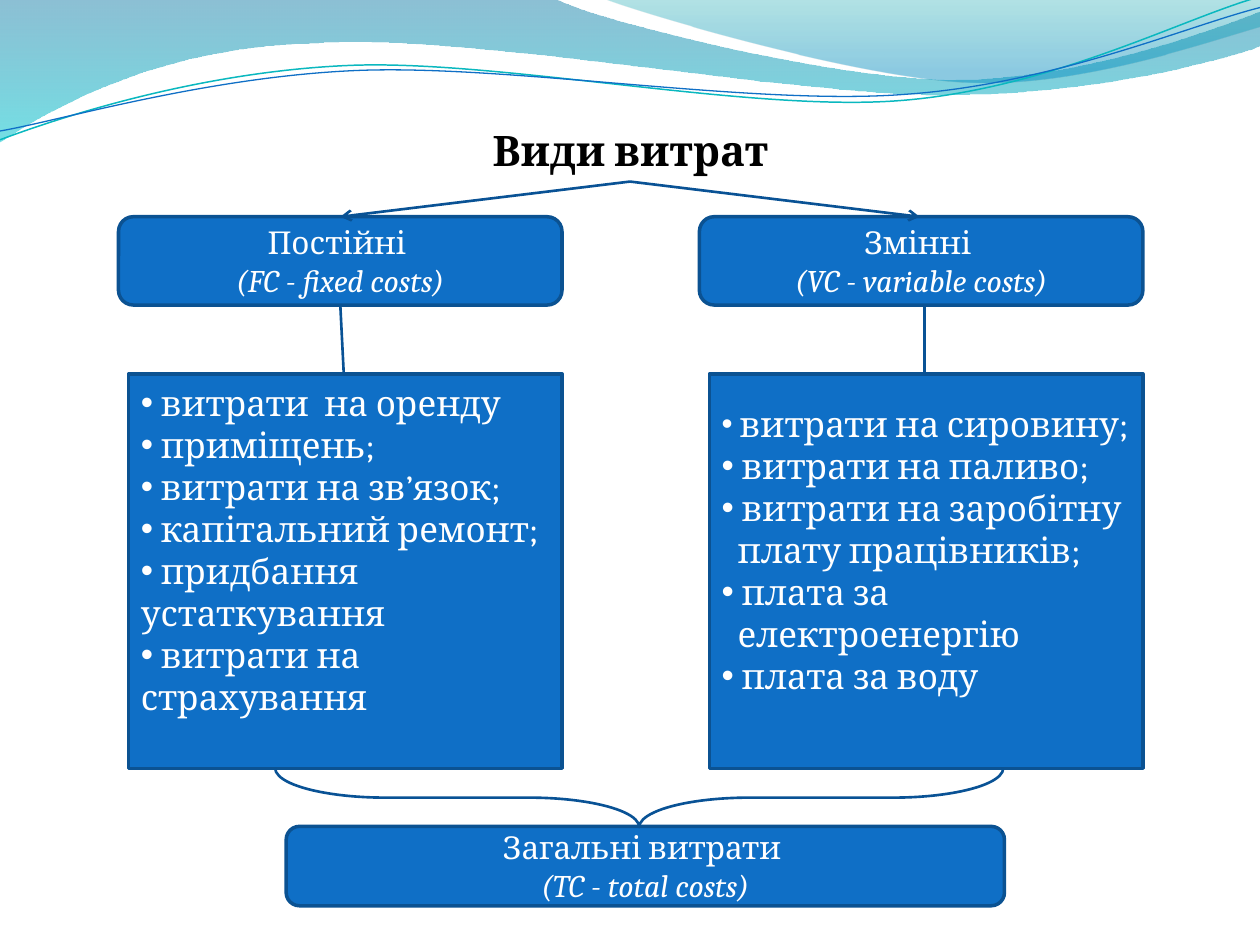
from dataclasses import dataclass
from typing import Optional

from lxml import etree
from pptx import Presentation
from pptx.dml.color import RGBColor
from pptx.enum.shapes import MSO_CONNECTOR, MSO_SHAPE
from pptx.enum.text import MSO_ANCHOR, MSO_AUTO_SIZE, PP_ALIGN
from pptx.oxml.ns import qn
from pptx.util import Cm, Pt

RECT, ROUND = MSO_SHAPE.RECTANGLE, MSO_SHAPE.ROUNDED_RECTANGLE
BRACE, STRAIGHT = MSO_SHAPE.RIGHT_BRACE, MSO_CONNECTOR.STRAIGHT
LEFT, CENTER, MIDDLE = PP_ALIGN.LEFT, PP_ALIGN.CENTER, MSO_ANCHOR.MIDDLE
FONT, WHITE, BLUE, EDGE, LINK = "Cambria", "FFFFFF", "0F6FC6", "0B5292", "095295"
UNIT = Cm(0.0254)  # wave points are in hundredths of an inch


@dataclass
class Run:
    text: str
    size: int = 20
    italic: bool = False
    bold: bool = False
    color: str = WHITE


@dataclass
class Para:
    runs: list[Run]
    align: PP_ALIGN = LEFT
    bullet: bool = False
    indent: float = 0


@dataclass
class Box:
    kind: MSO_SHAPE
    left: float
    top: float
    width: float
    height: float
    paras: list[Para]
    foot: float = 0.13


@dataclass
class Wave:
    start: tuple
    steps: list[tuple]  # two numbers make a line, six make a curve
    stops: tuple = ()  # position, colour, opacity in percent
    line: Optional[tuple] = None


@dataclass
class Link:
    start: tuple
    end: tuple
    arrow: bool = False


def rgb(code: str) -> RGBColor:
    return RGBColor.from_string(code)


def stroke(line, color: str, width: float) -> None:
    line.color.rgb = rgb(color)
    line.width = Pt(width)


def write(frame, paras: list[Para]) -> None:
    frame.word_wrap = True
    for n, para in enumerate(paras):
        p = frame.paragraphs[0] if n == 0 else frame.add_paragraph()
        p.alignment = para.align
        props = p._p.get_or_add_pPr()
        props.set("marL", str(Cm(para.indent)))
        props.set("indent", "0")
        if para.bullet:
            etree.SubElement(props, qn("a:buFont")).set("typeface", "Arial")
            etree.SubElement(props, qn("a:buChar")).set("char", "•")
        for run in para.runs:
            r = p.add_run()
            r.text = run.text
            r.font.name, r.font.size = FONT, Pt(run.size)
            r.font.bold, r.font.italic = run.bold, run.italic
            r.font.color.rgb = rgb(run.color)


def draw_wave(shapes, wave: Wave) -> None:
    pen = shapes.build_freeform(*wave.start, scale=UNIT)
    for step in wave.steps:
        pen.add_line_segments(list(zip(step[::2], step[1::2])), close=False)
    if wave.stops:
        pen.add_line_segments([wave.start], close=True)
    shape = pen.convert_to_shape()
    shape.shadow.inherit = False
    # Join each three points of a curve into one Bezier segment
    parts = iter(list(shape._element.iter(qn("a:lnTo"))))
    for step in wave.steps:
        nodes = [next(parts) for _ in range(len(step) // 2)]
        if len(nodes) == 3:
            curve = etree.Element(qn("a:cubicBezTo"))
            nodes[0].addprevious(curve)
            for node in nodes:
                curve.append(node[0])
                node.getparent().remove(node)
    if wave.line:
        shape.fill.background()
        stroke(shape.line, *wave.line)
        return
    shape.line.fill.background()
    shape.fill.gradient()
    shape.fill.gradient_angle = 270
    for stop, (pos, color, alpha) in zip(shape.fill.gradient_stops, wave.stops):
        stop.position = pos / 100
        stop.color.rgb = rgb(color)
    for node, (_, _, alpha) in zip(shape._element.iter(qn("a:srgbClr")), wave.stops):
        etree.SubElement(node, qn("a:alpha")).set("val", str(alpha * 1000))


def draw_box(shapes, box: Box) -> None:
    shape = shapes.add_shape(box.kind, Cm(box.left), Cm(box.top),
                             Cm(box.width), Cm(box.height))
    shape.shadow.inherit = False
    shape.fill.solid()
    shape.fill.fore_color.rgb = rgb(BLUE)
    stroke(shape.line, EDGE, 2)
    frame = shape.text_frame
    frame.vertical_anchor = MIDDLE
    frame.margin_bottom = Cm(box.foot)
    write(frame, box.paras)


def draw_link(shapes, link: Link) -> None:
    wire = shapes.add_connector(STRAIGHT, *map(Cm, link.start + link.end))
    stroke(wire.line, LINK, 1.5)
    props = wire._element.spPr
    if link.arrow:
        tail = etree.SubElement(props.find(qn("a:ln")), qn("a:tailEnd"))
        tail.set("type", "arrow")
    etree.SubElement(props, qn("a:effectLst"))


def label(name: str, note: str) -> list[Para]:
    return [Para([Run(name, 18)], CENTER), Para([Run(note, 18, italic=True)], CENTER)]


def item(text: str) -> Para:
    return Para([Run(" " + text)], bullet=True)


def more(text: str) -> Para:
    return Para([Run(text)], indent=0.32)


WAVES = [
    Wave((0, 0), [(440, -1), (476, 17, 664, 63, 758, 63), (853, 63, 958, 26, 1000, 9),
                  (1001, 36), (983, 44, 870, 76, 746, 75), (622, 75, 382, 28, 257, 34),
                  (129, 36, 46, 83, -1, 113)],
         stops=((0, "0074A1", 45), (100, "00C6CF", 55))),
    Wave((479, -1), [(509, 11, 682, 62, 769, 65), (856, 69, 961, 32, 1000, 21), (1000, 0)],
         stops=((0, "00A1A9", 30), (80, "008BBF", 45))),
    Wave((0, 111), [(48, 93, 158, 57, 277, 52), (395, 47, 593, 89, 713, 80),
                    (833, 71, 938, 15, 998, -2)], line=("0AB8BF", 0.85)),
    Wave((0, 104), [(47, 96, 164, 61, 283, 56), (403, 51, 597, 84, 717, 75),
                    (836, 67, 941, 21, 1000, 6)], line=("0F6FC6", 0.75)),
]

FIXED = [item("витрати  на оренду"), item("приміщень;"), item("витрати на зв’язок;"),
         item("капітальний ремонт;"), item("придбання устаткування"),
         item("витрати на страхування")]
VARY = [Para([Run(" ", 18), Run("витрати на сировину;")], bullet=True),
        item("витрати на паливо;"), item("витрати на заробітну"),
        more("плату працівників;"), item("плата за"), more("електроенергію"),
        item("плата за воду")]
SHIFT = 11.71  # from the left column to the right one

BOXES = [
    Box(ROUND, 5.77, 16.66, 14.48, 1.6, label("Загальні витрати ", "(TC - total costs)")),
]
for col, (head, rows) in enumerate([
        (label("Постійні ", "(FC - fixed costs)"), FIXED),
        (label("Змінні ", "(VC - variable costs)"), VARY)]):
    BOXES.append(Box(ROUND, 2.39 + col * SHIFT, 4.37, 8.94, 1.78, head))
    BOXES.append(Box(RECT, 2.59 + col * SHIFT, 7.54, 8.74, 7.95, rows, foot=1))

LINKS = [
    Link((12.7, 3.66), (6.86, 4.37), arrow=True),
    Link((12.7, 3.66), (18.54, 4.37), arrow=True),
    Link((6.86, 6.15), (6.93, 7.54)),
    Link((18.64, 6.15), (18.64, 7.54)),
]


def main() -> None:
    deck = Presentation()
    deck.slide_width, deck.slide_height = Cm(25.4), Cm(19.05)
    shapes = deck.slides.add_slide(deck.slide_layouts[6]).shapes
    # Waves along the top
    for wave in WAVES:
        draw_wave(shapes, wave)
    # Title
    title = shapes.add_textbox(Cm(2.59), Cm(2.39), Cm(20.24), Cm(1.27)).text_frame
    title.auto_size = MSO_AUTO_SIZE.SHAPE_TO_FIT_TEXT
    write(title, [Para([Run("Види витрат", 24, bold=True, color="000000")], CENTER)])
    # Cost boxes and their links
    for box in BOXES:
        draw_box(shapes, box)
    for link in LINKS:
        draw_link(shapes, link)
    # Brace that joins both columns
    brace = shapes.add_shape(BRACE, Cm(12.29), Cm(8.74), Cm(1.19), Cm(14.68))
    brace.rotation = 90
    brace.adjustments[0] = 1.87
    brace.shadow.inherit = False
    brace.fill.background()
    stroke(brace.line, LINK, 1.5)
    deck.save("out.pptx")


if __name__ == "__main__":
    main()
